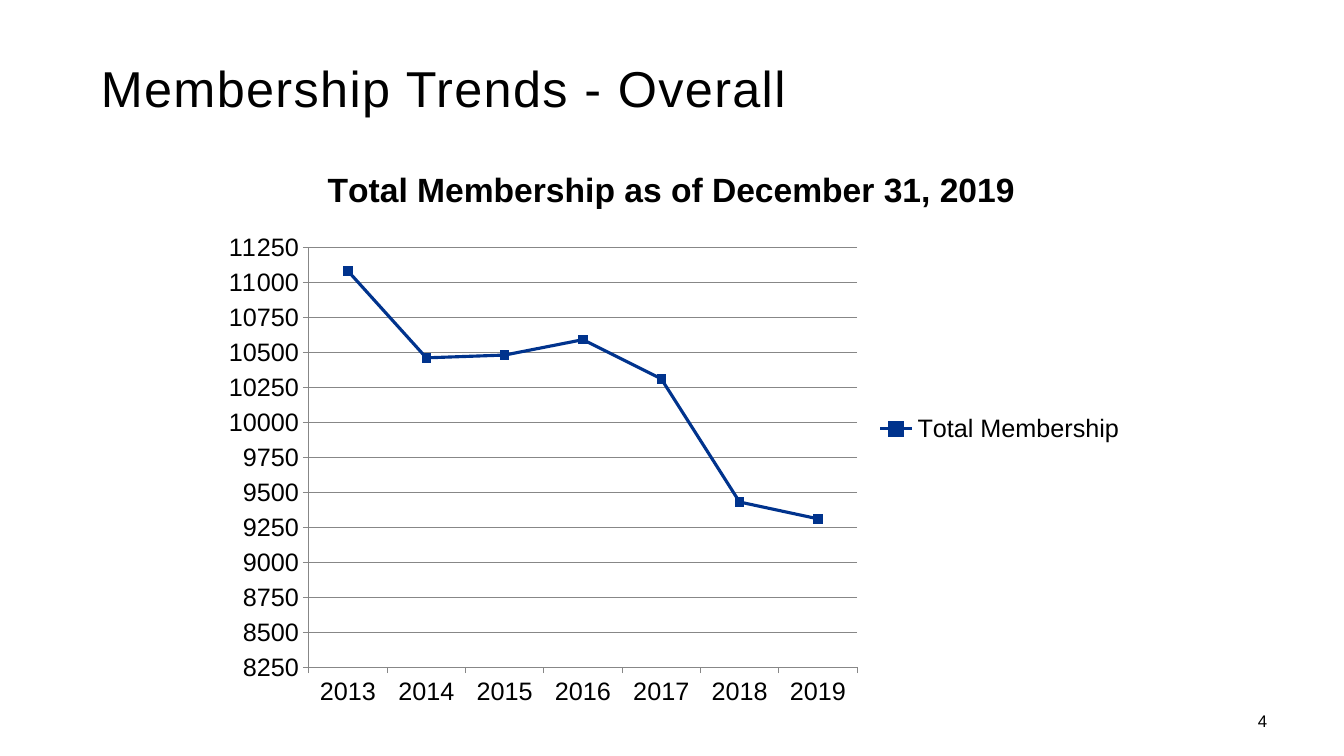
from lxml.etree import SubElement
from pptx import Presentation
from pptx.chart.data import CategoryChartData
from pptx.dml.color import RGBColor
from pptx.enum.chart import XL_CHART_TYPE, XL_LEGEND_POSITION, XL_MARKER_STYLE, XL_TICK_MARK
from pptx.enum.text import MSO_ANCHOR, PP_ALIGN
from pptx.oxml import parse_xml
from pptx.oxml.ns import nsdecls, qn
from pptx.util import Pt

COLORS = {"text": "000000", "series": "00338D", "grid": "878787"}
FONT = "Arial"
MEMBERSHIP = {
    "2013": 11080, "2014": 10460, "2015": 10480, "2016": 10590,
    "2017": 10310, "2018": 9430, "2019": 9310,
}


def style_font(font, size, bold=False):
    """Apply the slide's typeface and text colour."""
    font.name = FONT
    font.size = Pt(size)
    font.bold = bold
    font.color.rgb = RGBColor.from_string(COLORS["text"])


def style_line(line, color, width):
    """Set the colour and width of a line."""
    line.color.rgb = RGBColor.from_string(COLORS[color])
    line.width = Pt(width)


def place_heading(slide, left, top, width, height):
    """Move and format the title placeholder."""
    heading = slide.shapes.title
    heading.left, heading.top, heading.width, heading.height = map(Pt, (left, top, width, height))
    frame = heading.text_frame
    frame.text = "Membership Trends - Overall"
    frame.vertical_anchor = MSO_ANCHOR.MIDDLE
    frame.word_wrap = True
    paragraph = frame.paragraphs[0]
    paragraph.alignment = PP_ALIGN.LEFT
    style_font(paragraph.font, 36)
    paragraph.runs[0].font._element.set("spc", "100")


def set_plot_layout(chart, left, top, width, height):
    """Fix the inner plot area as fractions of the chart."""
    plot_area = chart._chartSpace.chart.plotArea
    for existing in plot_area.findall(qn("c:layout")):
        plot_area.remove(existing)
    layout = parse_xml(f"<c:layout {nsdecls('c')}/>")
    manual = SubElement(layout, qn("c:manualLayout"))
    settings = {"layoutTarget": "inner", "xMode": "edge", "yMode": "edge",
                "x": left, "y": top, "w": width, "h": height}
    for tag, value in settings.items():
        SubElement(manual, qn(f"c:{tag}")).set("val", str(value))
    plot_area.insert(0, layout)


def add_membership_chart(slide, left, top, width, height):
    """Draw the yearly membership line chart."""
    data = CategoryChartData()
    data.categories = list(MEMBERSHIP)
    data.add_series("Total Membership", list(MEMBERSHIP.values()))
    chart = slide.shapes.add_chart(
        XL_CHART_TYPE.LINE_MARKERS, *map(Pt, (left, top, width, height)), data).chart
    style_font(chart.font, 18)

    chart.has_title = True
    caption = chart.chart_title.text_frame
    caption.text = "Total Membership as of December 31, 2019"
    style_font(caption.paragraphs[0].font, 24, bold=True)
    chart.chart_title.include_in_layout = False

    chart.has_legend = True
    chart.legend.position = XL_LEGEND_POSITION.RIGHT
    chart.legend.include_in_layout = False

    counts = chart.value_axis
    counts.minimum_scale, counts.maximum_scale, counts.major_unit = 8250, 11250, 250
    counts.tick_labels.number_format = "General"
    counts.tick_labels.number_format_is_linked = False
    counts.has_major_gridlines = True
    style_line(counts.major_gridlines.format.line, "grid", 0.75)
    for axis in (counts, chart.category_axis):
        axis.major_tick_mark = XL_TICK_MARK.OUTSIDE
        style_line(axis.format.line, "grid", 0.75)

    chart.plots[0].vary_by_categories = False
    membership = chart.plots[0].series[0]
    membership.smooth = False
    style_line(membership.format.line, "series", 2.25)
    membership.marker.style = XL_MARKER_STYLE.SQUARE
    membership.marker.size = 6
    membership.marker.format.fill.solid()
    membership.marker.format.fill.fore_color.rgb = RGBColor.from_string(COLORS["series"])
    style_line(membership.marker.format.line, "series", 0.75)
    set_plot_layout(chart, 0.11, 0.18, 0.59, 0.74)


def add_page_number(slide, left, top, width, height):
    """Write the page number at the right of its box."""
    frame = slide.shapes.add_textbox(*map(Pt, (left, top, width, height))).text_frame
    frame.word_wrap = True
    frame.vertical_anchor = MSO_ANCHOR.MIDDLE
    frame.text = "4"
    paragraph = frame.paragraphs[0]
    paragraph.alignment = PP_ALIGN.RIGHT
    style_font(paragraph.font, 12)


def main():
    """Build and save the membership slide."""
    presentation = Presentation()
    presentation.slide_width, presentation.slide_height = Pt(960), Pt(540)
    slide = presentation.slides.add_slide(presentation.slide_layouts[5])
    add_membership_chart(slide, 147.6, 103.7, 663.8, 405.4)
    place_heading(slide, 64.8, 36.7, 584.6, 51.1)
    add_page_number(slide, 688.3, 500.4, 223.9, 28.8)
    presentation.save("out.pptx")


if __name__ == "__main__":
    main()
